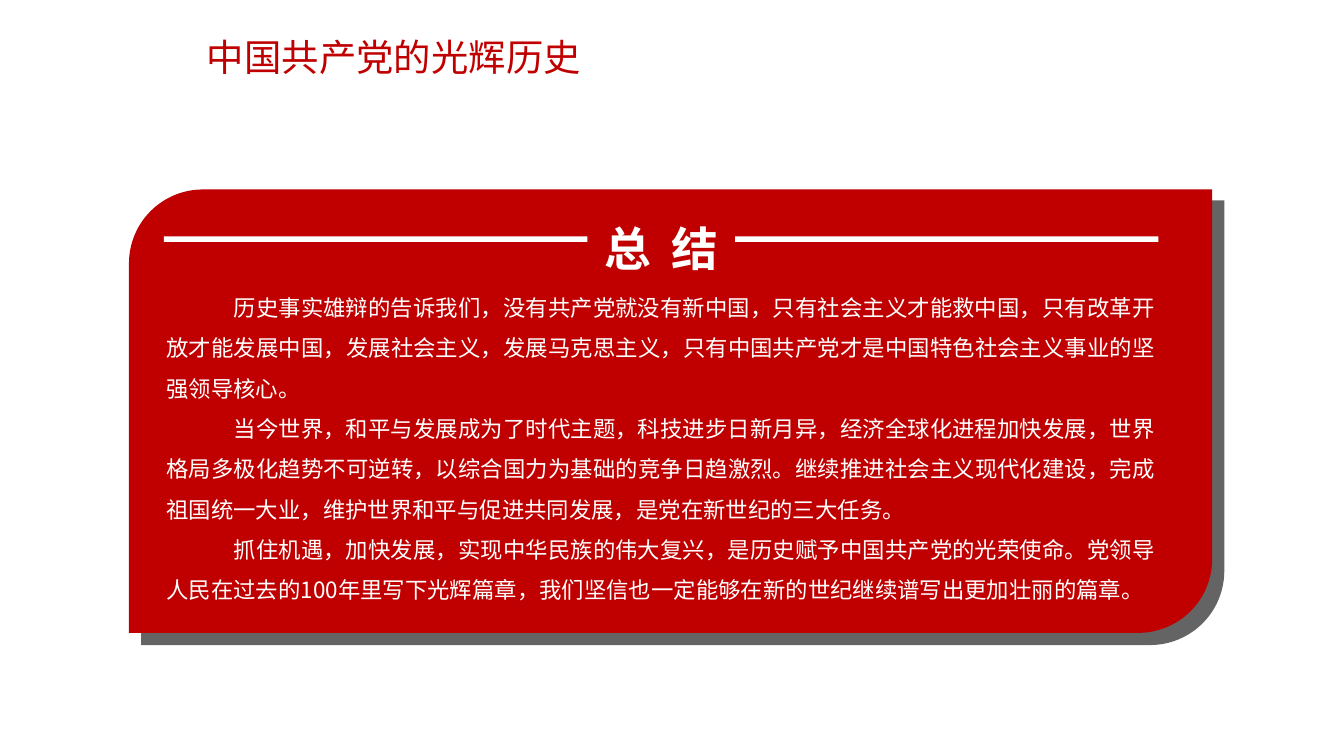
from pptx import Presentation
from pptx.dml.color import RGBColor
from pptx.enum import shapes, text
from pptx.oxml import ns
from pptx.util import Inches, Pt
from lxml import etree

HEADING = "中国共产党的光辉历史"
SUMMARY = "总 结"
CONCLUSIONS = [
    "历史事实雄辩的告诉我们，没有共产党就没有新中国，只有社会主义才能救中国，只有改革开放才能发展中国，发展社会主义，发展马克思主义，只有中国共产党才是中国特色社会主义事业的坚强领导核心。",
    "当今世界，和平与发展成为了时代主题，科技进步日新月异，经济全球化进程加快发展，世界格局多极化趋势不可逆转，以综合国力为基础的竞争日趋激烈。继续推进社会主义现代化建设，完成祖国统一大业，维护世界和平与促进共同发展，是党在新世纪的三大任务。",
    "抓住机遇，加快发展，实现中华民族的伟大复兴，是历史赋予中国共产党的光荣使命。党领导人民在过去的100年里写下光辉篇章，我们坚信也一定能够在新的世纪继续谱写出更加壮丽的篇章。",
]

THEME = {
    "red": RGBColor.from_string("C00000"),
    "gray": RGBColor.from_string("646464"),
    "white": RGBColor.from_string("FFFFFF"),
    "heading_font": "Noto Sans CJK JP",
    "body_font": "Noto Sans CJK SC",
    "heading_size": Pt(20),
    "summary_size": Pt(25),
    "body_size": Pt(12),
}

SLIDE_WIDTH = 10
SLIDE_HEIGHT = SLIDE_WIDTH * 9 / 16
CARDS = [
    ((1.05, 1.49, 8.06, 3.31), THEME["gray"]),
    ((0.96, 1.41, 8.06, 3.3), THEME["red"]),
]
RULE_LEFT, RULE_TOP, RULE_WIDTH, RULE_HEIGHT = 1.22, 1.76, 3.15, 0.04
RULE_GAP = 1.1


def set_all(target, values):
    for name, value in values.items():
        setattr(target, name, value)


def add_block(slide, kind, box, color):
    block = slide.shapes.add_shape(kind, *map(Inches, box))
    block.shadow.inherit = False
    block.fill.solid()
    block.fill.fore_color.rgb = color
    block.line.fill.background()


def add_text(slide, box, lines, face, color, font, frame=None, para=None,
             indent=0, spacing=0):
    text_frame = slide.shapes.add_textbox(*map(Inches, box)).text_frame
    set_all(text_frame, {"word_wrap": True, **(frame or {})})
    for number, line in enumerate(lines):
        paragraph = text_frame.paragraphs[0] if number == 0 else text_frame.add_paragraph()
        set_all(paragraph, para or {})
        if indent:
            properties = paragraph._p.get_or_add_pPr()
            properties.set("marL", "0")
            properties.set("indent", str(Inches(indent)))
        run = paragraph.add_run()
        run.text = line
        set_all(run.font, {"name": face, **font})
        run.font.color.rgb = color
        run_properties = run._r.get_or_add_rPr()
        etree.SubElement(run_properties, ns.qn("a:ea")).set("typeface", face)
        if spacing:
            run_properties.set("spc", str(spacing))


def main():
    deck = Presentation()
    set_all(deck, {"slide_width": Inches(SLIDE_WIDTH),
                   "slide_height": Inches(SLIDE_HEIGHT)})
    slide = deck.slides.add_slide(deck.slide_layouts[6])

    add_text(slide, (1.54, 0.14, 2.99, 0.56), [HEADING],
             THEME["heading_font"], THEME["red"], {"size": THEME["heading_size"]},
             frame={"vertical_anchor": text.MSO_ANCHOR.MIDDLE,
                    "margin_left": 0, "margin_right": 0})

    for box, color in CARDS:
        add_block(slide, shapes.MSO_SHAPE.ROUND_2_DIAG_RECTANGLE, box, color)

    grow = {"auto_size": text.MSO_AUTO_SIZE.SHAPE_TO_FIT_TEXT}
    add_text(slide, (4.29, 1.38, 1.26, 0.66), [SUMMARY],
             THEME["body_font"], THEME["white"],
             {"size": THEME["summary_size"], "bold": True}, frame=grow,
             para={"alignment": text.PP_ALIGN.CENTER, "line_spacing": 1.5},
             spacing=280)
    add_text(slide, (1.14, 2.04, 7.56, 2.52), CONCLUSIONS,
             THEME["body_font"], THEME["white"], {"size": THEME["body_size"]},
             frame=grow,
             para={"alignment": text.PP_ALIGN.JUSTIFY, "line_spacing": 1.5},
             indent=0.5)

    for side in range(2):
        add_block(slide, shapes.MSO_SHAPE.RECTANGLE,
                  (RULE_LEFT + side * (RULE_WIDTH + RULE_GAP), RULE_TOP,
                   RULE_WIDTH, RULE_HEIGHT), THEME["white"])

    deck.save("out.pptx")


if __name__ == "__main__":
    main()
